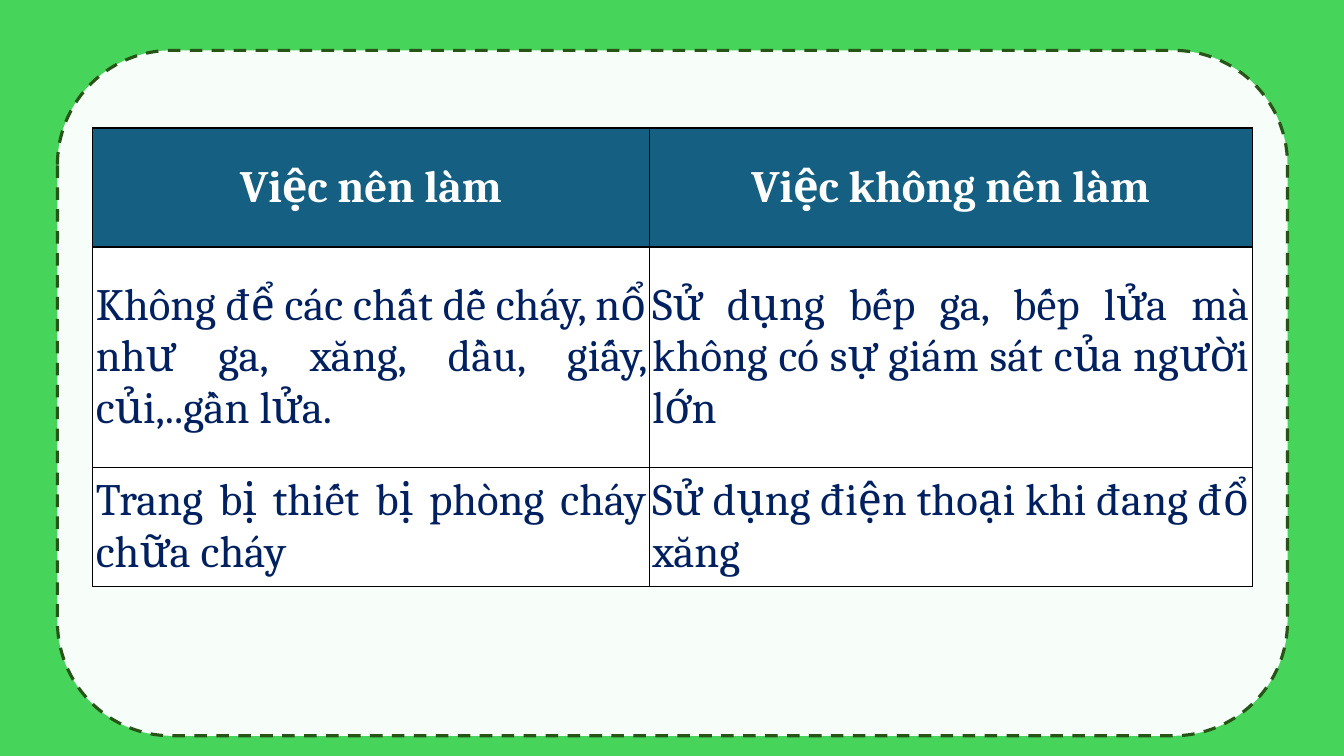
from dataclasses import dataclass

from lxml.etree import SubElement
from pptx import Presentation
from pptx.dml.color import RGBColor
from pptx.enum.dml import MSO_LINE
from pptx.enum.shapes import MSO_SHAPE
from pptx.enum.text import MSO_ANCHOR, PP_ALIGN
from pptx.oxml.ns import qn
from pptx.slide import Slide
from pptx.table import _Cell
from pptx.util import Inches, Pt


@dataclass(frozen=True)
class Theme:
    background: str = "47D45A"
    panel: str = "FFFFFF"
    panel_border: str = "275417"
    header: str = "156082"
    header_text: str = "FFFFFF"
    body: str = "FFFFFF"
    body_text: str = "002060"
    grid: str = "000000"
    font: str = "Cambria"
    size: int = 32


@dataclass(frozen=True)
class AdviceRow:
    should_do: str
    should_not_do: str
    height: float
    is_header: bool = False


THEME = Theme()
COLUMN_WIDTHS = (5.52, 5.98)
ADVICE = (
    AdviceRow("Việc nên làm", "Việc không nên làm", 1.18, is_header=True),
    AdviceRow(
        "Không để các chất dễ cháy, nổ như ga, xăng, dầu, giấy, củi,..gần lửa.",
        "Sử dụng bếp ga, bếp lửa mà không có sự giám sát của người lớn",
        2.19,
    ),
    AdviceRow(
        "Trang bị thiết bị phòng cháy chữa cháy",
        "Sử dụng điện thoại khi đang đổ xăng",
        1.18,
    ),
)


def rgb(value: str) -> RGBColor:
    return RGBColor.from_string(value)


def write_text(cell: _Cell, text: str, *, color: str, align: PP_ALIGN, bold: bool = False) -> None:
    paragraph = cell.text_frame.paragraphs[0]
    paragraph.alignment = align
    paragraph.space_after = Pt(12)
    properties = paragraph._p.get_or_add_pPr()
    for side in ("marL", "marR"):
        properties.set(side, str(Inches(0.03)))
    properties.set("indent", "0")
    run = paragraph.add_run()
    run.text = text
    run.font.name = THEME.font
    run.font.size = Pt(THEME.size)
    run.font.bold = bold
    run.font.color.rgb = rgb(color)


def add_borders(cell: _Cell) -> None:
    """Draw all four sides; borders must precede the fill in the cell's XML."""
    properties = cell._tc.get_or_add_tcPr()
    for side in ("lnL", "lnR", "lnT", "lnB"):
        line = SubElement(properties, qn(f"a:{side}"), w=str(Pt(1)))
        fill = SubElement(line, qn("a:solidFill"))
        SubElement(fill, qn("a:srgbClr"), val=THEME.grid)


def format_cell(cell: _Cell, text: str, is_header: bool) -> None:
    cell.margin_left = cell.margin_right = cell.margin_top = cell.margin_bottom = 0
    cell.vertical_anchor = MSO_ANCHOR.MIDDLE
    add_borders(cell)
    cell.fill.solid()
    cell.fill.fore_color.rgb = rgb(THEME.header if is_header else THEME.body)
    write_text(
        cell,
        text,
        color=THEME.header_text if is_header else THEME.body_text,
        align=PP_ALIGN.CENTER if is_header else PP_ALIGN.JUSTIFY,
        bold=is_header,
    )


def add_panel(slide: Slide) -> None:
    panel = slide.shapes.add_shape(
        MSO_SHAPE.ROUNDED_RECTANGLE, Inches(0.57), Inches(0.5), Inches(12.2), Inches(6.8)
    )
    panel.shadow.inherit = False
    panel.fill.solid()
    panel.fill.fore_color.rgb = rgb(THEME.panel)
    panel_color = panel._element.spPr.find(qn("a:solidFill"))[0]
    SubElement(panel_color, qn("a:alpha"), val="96000")
    panel.line.color.rgb = rgb(THEME.panel_border)
    panel.line.width = Pt(2.25)
    panel.line.dash_style = MSO_LINE.DASH


def add_advice_table(slide: Slide) -> None:
    advice_table = slide.shapes.add_table(
        len(ADVICE),
        len(COLUMN_WIDTHS),
        Inches(0.92),
        Inches(1.27),
        Inches(sum(COLUMN_WIDTHS)),
        Inches(sum(advice.height for advice in ADVICE)),
    ).table
    advice_table.horz_banding = False
    for column, width in zip(advice_table.columns, COLUMN_WIDTHS):
        column.width = Inches(width)
    for row, advice in zip(advice_table.rows, ADVICE):
        row.height = Inches(advice.height)
        for cell, text in zip(row.cells, (advice.should_do, advice.should_not_do)):
            format_cell(cell, text, advice.is_header)


def main() -> None:
    presentation = Presentation()
    presentation.slide_width = Inches(13.33)
    presentation.slide_height = Inches(7.5)
    slide = presentation.slides.add_slide(presentation.slide_layouts[6])
    slide.background.fill.solid()
    slide.background.fill.fore_color.rgb = rgb(THEME.background)
    add_panel(slide)
    add_advice_table(slide)
    presentation.save("out.pptx")


if __name__ == "__main__":
    main()
